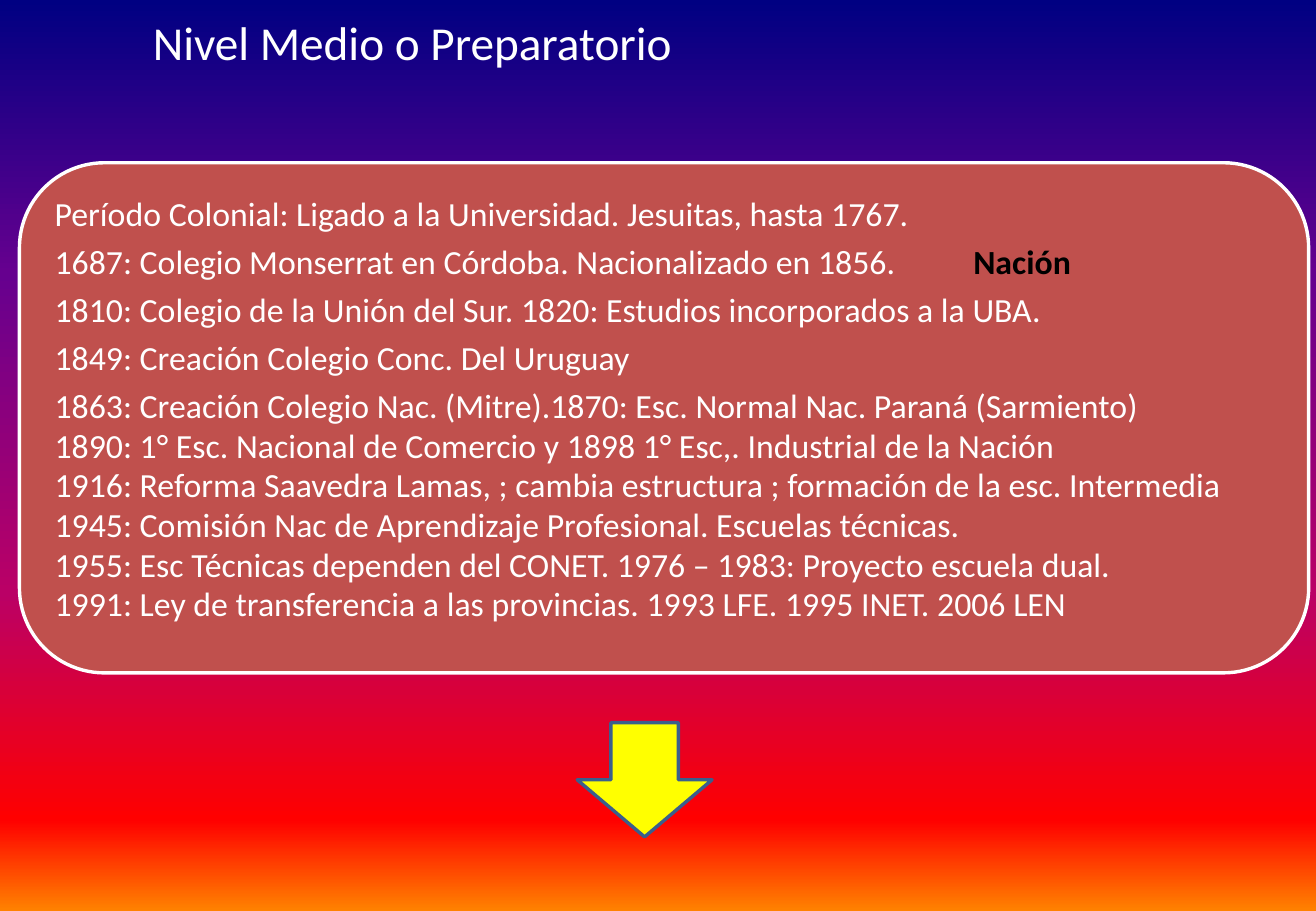
from copy import deepcopy

from lxml import etree
from pptx import Presentation
from pptx import util as u
from pptx.dml.color import RGBColor
from pptx.enum import shapes, text
from pptx.oxml import ns

WHITE = RGBColor(0xFF, 0xFF, 0xFF)
BLACK = RGBColor(0x00, 0x00, 0x00)
BRICK = RGBColor(0xC0, 0x50, 0x4D)
YELLOW = RGBColor(0xFF, 0xFF, 0x00)
STEEL = RGBColor(0x3A, 0x5F, 0x8C)
SUNSET = [
    (0, RGBColor(0x00, 0x00, 0x82)),
    (0.3, RGBColor(0x66, 0x00, 0x8F)),
    (0.65, RGBColor(0xBA, 0x00, 0x66)),
    (0.9, RGBColor(0xFF, 0x00, 0x00)),
    (1, RGBColor(0xFF, 0x82, 0x00)),
]
FONT = "Calibri"
SPACED_LINES = 4
HISTORY = [
    "Período Colonial: Ligado a la Universidad. Jesuitas, hasta 1767.",
    "1687: Colegio Monserrat en Córdoba. Nacionalizado en 1856.\tNación",
    "1810: Colegio de la Unión del Sur. 1820: Estudios incorporados a la UBA.",
    "1849: Creación Colegio Conc. Del Uruguay",
    "1863: Creación Colegio Nac. (Mitre).1870: Esc. Normal Nac. Paraná (Sarmiento)",
    "1890: 1° Esc. Nacional de Comercio y 1898 1° Esc,. Industrial de la Nación",
    "1916: Reforma Saavedra Lamas, ; cambia estructura ; formación de la esc. Intermedia",
    "1945: Comisión Nac de Aprendizaje Profesional. Escuelas técnicas.",
    "1955: Esc Técnicas dependen del CONET. 1976 – 1983: Proyecto escuela dual.",
    "1991: Ley de transferencia a las provincias. 1993 LFE. 1995 INET. 2006 LEN",
]


def paint_background(page):
    """Fill the page with the sunset gradient from top to bottom."""
    fill = page.background.fill
    fill.gradient()
    fill.gradient_angle = 270
    stop_list = page.element.find(".//" + ns.qn("a:gsLst"))
    while len(stop_list) < len(SUNSET):
        stop_list.append(deepcopy(stop_list[0]))
    for stop, (position, color) in zip(fill.gradient_stops, SUNSET):
        stop.position = position
        stop.color.rgb = color


def add_outlined(page, kind, box, fill, line):
    """Add a flat preset shape with a two-point outline."""
    shape = page.shapes.add_shape(kind, *map(u.Inches, box))
    shape.shadow.inherit = False
    shape.fill.solid()
    shape.fill.fore_color.rgb = fill
    shape.line.color.rgb = line
    shape.line.width = u.Pt(2)


def add_text_frame(page, box):
    """Add a wrapping text box and return its frame."""
    frame = page.shapes.add_textbox(*map(u.Inches, box)).text_frame
    frame.word_wrap = True
    return frame


def style_font(font, size):
    """Set the white text style of the slide."""
    font.name = FONT
    font.size = u.Pt(size)
    font.color.rgb = WHITE


def add_title(page, box):
    """Write the slide title in the box."""
    para = add_text_frame(page, box).paragraphs[0]
    para.add_run().text = "Nivel Medio o Preparatorio"
    style_font(para.font, 28)


def add_tab_stop(para, position):
    """Give the paragraph a left tab stop ahead of its default font."""
    tabs = etree.Element(ns.qn("a:tabLst"))
    etree.SubElement(tabs, ns.qn("a:tab"), pos=str(u.Inches(position)), algn="l")
    para.font._element.addprevious(tabs)


def add_history(page, box):
    """Draw the rounded panel and its dated lines."""
    left, top, width, height = box
    add_outlined(page, shapes.MSO_SHAPE.ROUNDED_RECTANGLE, box, BRICK, WHITE)
    frame = add_text_frame(page, (left + 0.21, top + 0.18, width - 0.41, height - 0.41))
    frame.vertical_anchor = text.MSO_ANCHOR.TOP
    frame.margin_left = frame.margin_right = u.Inches(0.08)
    frame.margin_top = frame.margin_bottom = u.Inches(0.08)
    for index, line in enumerate(HISTORY):
        para = frame.paragraphs[0] if index == 0 else frame.add_paragraph()
        para.line_spacing = 0.98
        para.space_after = u.Pt(5 if index < SPACED_LINES else 0)
        style_font(para.font, 20)
        entry, tab, remark = line.partition("\t")
        para.add_run().text = entry + tab
        if remark:
            add_tab_stop(para, 7.56)
            span = para.add_run()
            span.text = remark
            span.font.bold = True
            span.font.color.rgb = BLACK


def main():
    """Build the slide and save the deck."""
    deck = Presentation()
    deck.slide_width, deck.slide_height = u.Inches(10.83), u.Inches(7.5)
    page = deck.slides.add_slide(deck.slide_layouts[6])
    paint_background(page)
    add_history(page, (0.16, 1.34, 10.61, 4.2))
    add_outlined(page, shapes.MSO_SHAPE.DOWN_ARROW, (4.75, 5.95, 1.11, 0.94), YELLOW, STEEL)
    add_title(page, (1.16, 0.06, 7.24, 0.57))
    deck.save("out.pptx")


if __name__ == "__main__":
    main()
